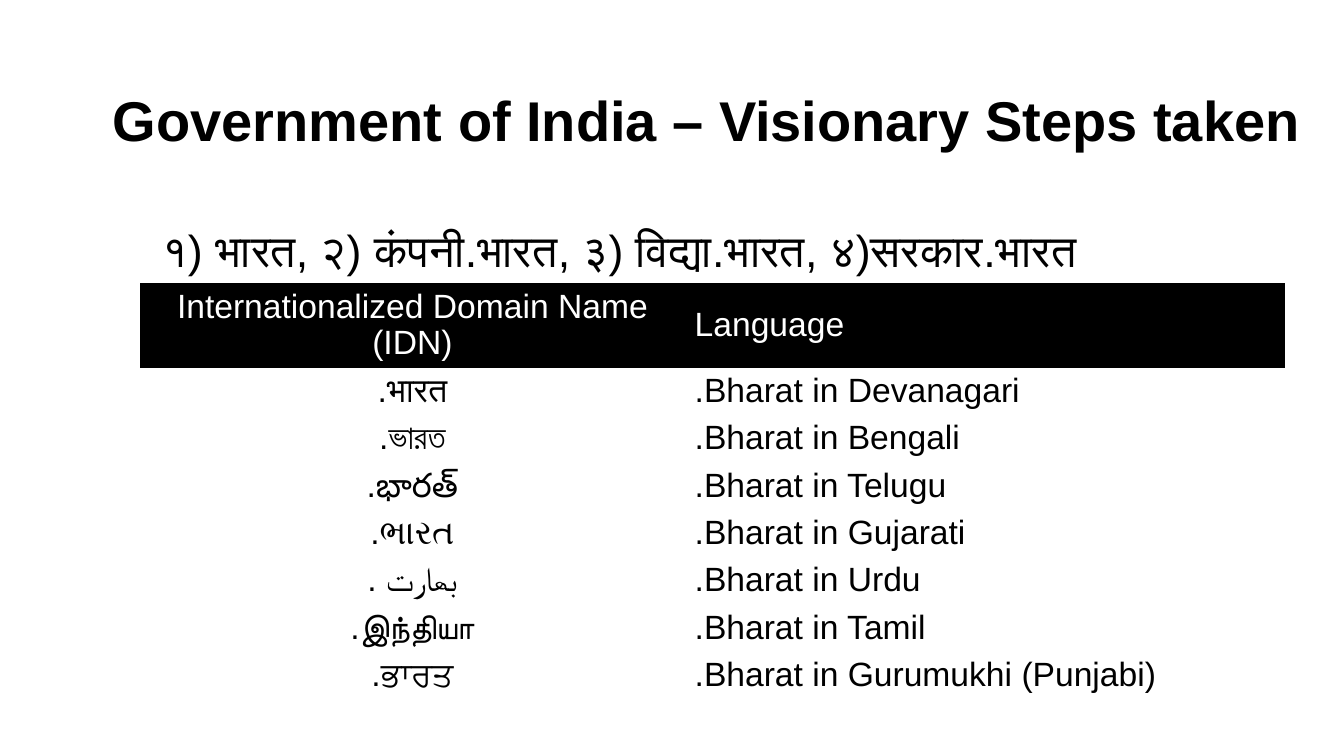
from dataclasses import dataclass

from pptx import Presentation
from pptx.dml.color import RGBColor
from pptx.enum.text import MSO_ANCHOR as Anchor, PP_ALIGN as Align
from pptx.oxml.ns import qn
from pptx.util import Inches, Pt

WIDTH, HEIGHT = 13.33, 7.5
FONT = "Arial"
BLACK, WHITE = "000000", "FFFFFF"
PLAIN_TABLE_STYLE = "{2D5ABB26-0587-4C30-8999-92F81FD0307C}"
COLUMN_WIDTHS = (5.4, 5.95)
HEADER_HEIGHT, ROW_HEIGHT = 0.84, 0.47


@dataclass(frozen=True)
class Area:
    left: float
    top: float
    width: float
    height: float

    def lengths(self) -> tuple:
        return tuple(Inches(value) for value in (self.left, self.top, self.width, self.height))


@dataclass(frozen=True)
class Domain:
    name: str
    language: str


HEADER = Domain("Internationalized Domain Name (IDN)", "Language")
DOMAINS = [
    Domain(".भारत", ".Bharat in Devanagari"),
    Domain(".ভারত", ".Bharat in Bengali"),
    Domain(".భారత్", ".Bharat in Telugu"),
    Domain(".ભારત", ".Bharat in Gujarati"),
    Domain(". بھارت", ".Bharat in Urdu"),
    Domain(".இந்தியா", ".Bharat in Tamil"),
    Domain(".ਭਾਰਤ", ".Bharat in Gurumukhi (Punjabi)"),
]


def color(value: str) -> RGBColor:
    return RGBColor.from_string(value)


def write(frame, text: str, *, size: float, ink: str = BLACK, bold: bool = False,
          align=Align.LEFT, spacing: float = 1.0) -> None:
    frame.word_wrap = True
    para = frame.paragraphs[0]
    para.alignment = align
    para.line_spacing = spacing
    span = para.add_run()
    span.text = text
    span.font.name = FONT
    span.font.size = Pt(size)
    span.font.bold = bold
    span.font.color.rgb = color(ink)


def add_title(page, text: str, area: Area) -> None:
    box = page.shapes.title
    box.left, box.top, box.width, box.height = area.lengths()
    box.text_frame.vertical_anchor = Anchor.TOP
    write(box.text_frame, text, size=40, bold=True)


def add_text(page, text: str, area: Area) -> None:
    box = page.shapes.add_textbox(*area.lengths())
    write(box.text_frame, text, size=32)


def add_domain_table(page, area: Area) -> None:
    rows = [HEADER, *DOMAINS]
    frame = page.shapes.add_table(len(rows), len(COLUMN_WIDTHS), *area.lengths())
    table = frame.table
    table.horz_banding = False
    next(frame.element.iter(qn("a:tableStyleId"))).text = PLAIN_TABLE_STYLE
    for column, width in zip(table.columns, COLUMN_WIDTHS):
        column.width = Inches(width)
    for index, domain in enumerate(rows):
        heading = index == 0
        table.rows[index].height = Inches(HEADER_HEIGHT if heading else ROW_HEIGHT)
        texts = ((domain.name, Align.CENTER), (domain.language, Align.LEFT))
        for cell, (text, align) in zip(table.rows[index].cells, texts):
            cell.vertical_anchor = Anchor.MIDDLE
            if heading:
                cell.fill.solid()
                cell.fill.fore_color.rgb = color(BLACK)
            else:
                cell.fill.background()
            write(cell.text_frame, text, size=24, ink=WHITE if heading else BLACK,
                  align=align, spacing=0.96)


def main() -> None:
    deck = Presentation()
    deck.slide_width, deck.slide_height = Inches(WIDTH), Inches(HEIGHT)
    page = deck.slides.add_slide(deck.slide_layouts.get_by_name("Title Only"))
    table_height = HEADER_HEIGHT + ROW_HEIGHT * len(DOMAINS)
    add_domain_table(page, Area(1.39, 2.81, sum(COLUMN_WIDTHS), table_height))
    add_text(page, "१) भारत, २) कंपनी.भारत, ३) विद्या.भारत, ४)सरकार.भारत",
             Area(1.51, 2.16, 10.94, 0.64))
    add_title(page, "Government of India – Visionary Steps taken",
              Area(1.02, 0.8, 12.1, 0.77))
    deck.save("out.pptx")


if __name__ == "__main__":
    main()
